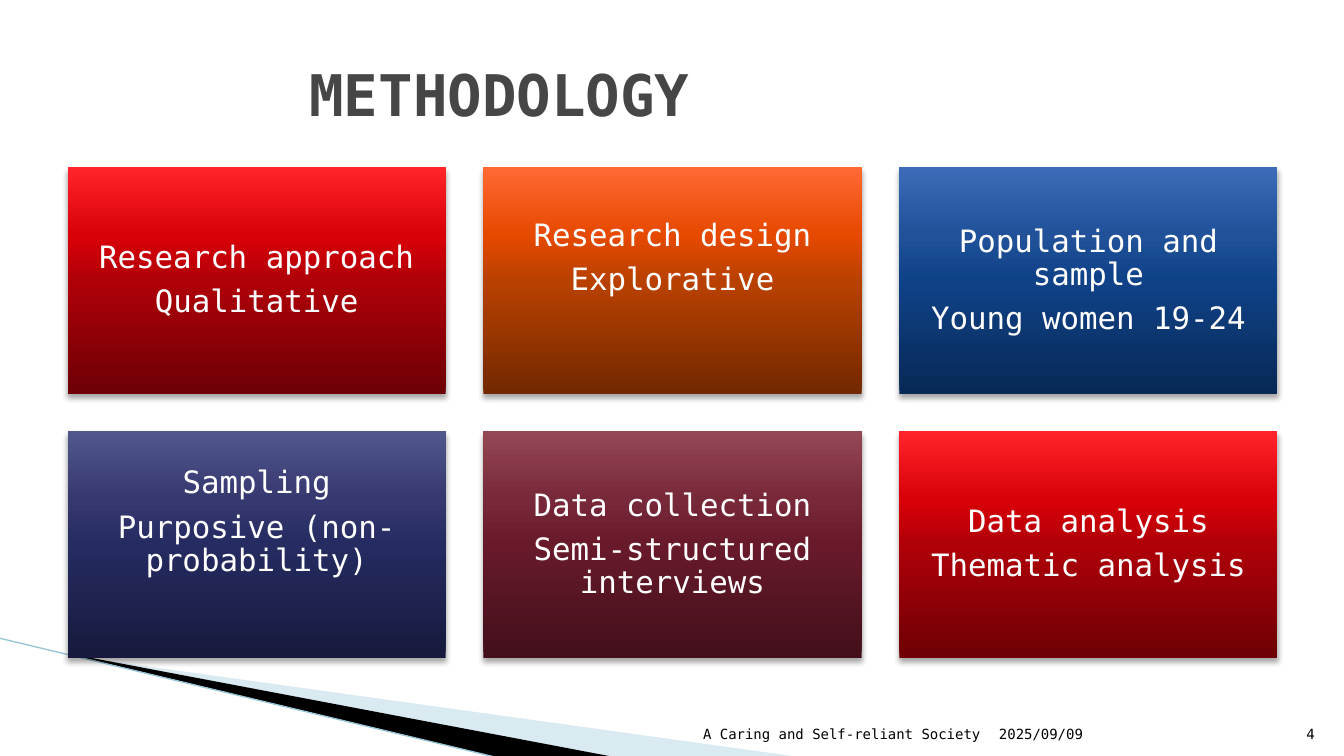
from lxml import etree
from pptx import Presentation
from pptx.dml.color import RGBColor
from pptx.enum import shapes, text
from pptx.oxml.ns import qn
from pptx.util import Inches, Pt

FONT = "DejaVu Sans Mono"
WHITE = RGBColor(0xFF, 0xFF, 0xFF)
BLACK = RGBColor(0, 0, 0)
HEADING = RGBColor(0x46, 0x46, 0x46)
PALE_BLUE = RGBColor(0xA0, 0xCB, 0xDC)
LINE_BLUE = RGBColor(0x97, 0xC5, 0xD8)
RED = [RGBColor.from_string(c) for c in ("6D0005", "B00008", "DA0008", "FF2429")]
ORANGE = [RGBColor.from_string(c) for c in ("732800", "B94100", "E64900", "FF6933")]
BLUE = [RGBColor.from_string(c) for c in ("072956", "104288", "205199", "3D6BB9")]
INDIGO = [RGBColor.from_string(c) for c in ("171A3D", "262B61", "353970", "51568D")]
WINE = [RGBColor.from_string(c) for c in ("420F1A", "681A2B", "772939", "944755")]


def add_color(parent, color, alpha=None):
    node = etree.SubElement(parent, qn("a:srgbClr"), val=str(color))
    if alpha is not None:
        etree.SubElement(node, qn("a:alpha"), val=str(alpha * 1000))


def add_label(box, words, size, color, align, anchor, bold=False):
    label = slide.shapes.add_textbox(*[Inches(v) for v in box])
    frame = label.text_frame
    frame.word_wrap = True
    frame.vertical_anchor = anchor
    line = frame.paragraphs[0]
    line.text = words
    line.alignment = align
    line.font.name = FONT
    line.font.size = Pt(size)
    line.font.bold = bold
    line.font.color.rgb = color


prs = Presentation()
prs.slide_width = Inches(13.33)
prs.slide_height = Inches(7.5)
slide = prs.slides.add_slide(prs.slide_layouts[6])

swooshes = [
    ([(0.73, 6.51), (7.93, 7.51), (6.08, 7.51), (0.73, 6.5)], PALE_BLUE, 40),
    ([(0.71, 6.49), (6.09, 7.51), (4.96, 7.52), (0.72, 6.5)], BLACK, 100),
]
for points, color, alpha in swooshes:
    corners = [(Inches(x), Inches(y)) for x, y in points]
    builder = slide.shapes.build_freeform(*corners[0])
    builder.add_line_segments(corners[1:], close=True)
    swoosh = builder.convert_to_shape()
    swoosh.shadow.inherit = False
    swoosh.line.fill.background()
    swoosh.fill.solid()
    swoosh.fill.fore_color.rgb = color
    if alpha < 100:
        tint = swoosh.element.spPr.find(qn("a:solidFill"))[0]
        etree.SubElement(tint, qn("a:alpha"), val=str(alpha * 1000))

edge = slide.shapes.add_connector(
    shapes.MSO_CONNECTOR.STRAIGHT, Inches(-0.01), Inches(6.33), Inches(4.95), Inches(7.52))
edge.line.color.rgb = LINE_BLUE
edge.line.width = Pt(0.95)
etree.SubElement(edge.element.spPr, qn("a:effectLst"))

cards = [
    ("Research approach", "Qualitative", RED, 0.09),
    ("Research design", "Explorative", ORANGE, 0.53),
    ("Population and sample", "Young women 19-24", BLUE, 0.09),
    ("Sampling", "Purposive (non-probability)", INDIGO, 0.53),
    ("Data collection", "Semi-structured interviews", WINE, 0.09),
    ("Data analysis", "Thematic analysis", RED, 0.09),
]
for i, (topic, choice, shades, bottom_inset) in enumerate(cards):
    row, column = divmod(i, 3)
    card = slide.shapes.add_shape(
        shapes.MSO_SHAPE.RECTANGLE, Inches(0.67 + 4.125 * column),
        Inches(1.66 + 2.62 * row), Inches(3.75), Inches(2.25))
    card.line.fill.background()
    card.fill.gradient()
    card.fill.gradient_angle = 90
    stops = card.element.spPr.find(qn("a:gradFill")).find(qn("a:gsLst"))
    for stop in list(stops):
        stops.remove(stop)
    for position, shade in zip((0, 50, 70, 100), shades):
        add_color(etree.SubElement(stops, qn("a:gs"), pos=str(position * 1000)), shade)

    card.shadow.inherit = False
    effects = card.element.spPr.find(qn("a:effectLst"))
    shadow = etree.SubElement(
        effects, qn("a:outerShdw"), blurRad=str(Pt(4)), dist=str(Pt(3)),
        dir="5400000", rotWithShape="0")
    add_color(shadow, BLACK, 35)

    frame = card.text_frame
    frame.word_wrap = True
    frame.vertical_anchor = text.MSO_ANCHOR.MIDDLE
    frame.margin_left = frame.margin_right = frame.margin_top = Inches(0.09)
    frame.margin_bottom = Inches(bottom_inset)
    frame.text = f"{topic}\n{choice}"
    for line in frame.paragraphs:
        line.alignment = text.PP_ALIGN.CENTER
        line.line_spacing = 0.9
        line.space_after = Pt(7.7)
        line.font.name = FONT
        line.font.size = Pt(22)
        line.font.color.rgb = WHITE

footers = [
    ((9.81, 7.01, 2.8, 0.4), "2025/09/09", text.PP_ALIGN.LEFT),
    ((6.39, 7.01, 3.43, 0.4), "A Caring and Self-reliant Society", text.PP_ALIGN.RIGHT),
    ((12.61, 7.01, 0.53, 0.4), "4", text.PP_ALIGN.RIGHT),
]
for box, words, align in footers:
    add_label(box, words, 10, BLACK, align, text.MSO_ANCHOR.BOTTOM)

add_label((2.97, 0.3, 9.7, 1.25), "METHODOLOGY", 41, HEADING,
          text.PP_ALIGN.LEFT, text.MSO_ANCHOR.MIDDLE, bold=True)

prs.save("out.pptx")
